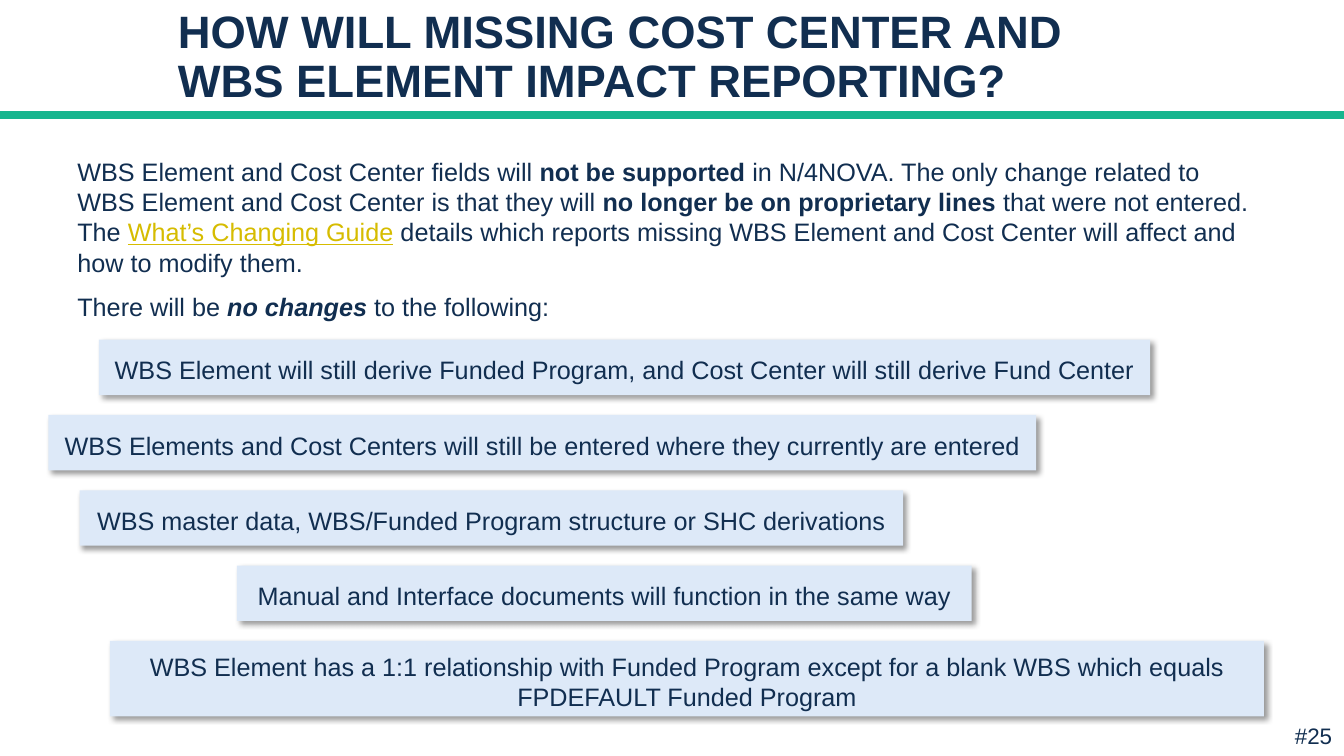
from lxml import etree
from pptx import Presentation
from pptx.dml.color import RGBColor
from pptx.enum.shapes import MSO_CONNECTOR, MSO_SHAPE
from pptx.enum.text import MSO_ANCHOR as Anchor, PP_ALIGN as Align
from pptx.oxml import parse_xml
from pptx.oxml.ns import nsdecls, qn
from pptx.util import Pt

NAVY, GREEN, GOLD, PALE_BLUE = "112E50", "16B58E", "D6BC00", "DDE9F8"
SLIDE_WIDTH, SLIDE_HEIGHT = 960, 540
BOLD = {"bold": True}

TITLE = "HOW WILL MISSING COST CENTER AND WBS ELEMENT IMPACT REPORTING?"
INTRO = [
    [("WBS Element and Cost Center fields will ", {}),
     ("not be supported ", BOLD),
     ("in N/4NOVA. The only change related to WBS Element and Cost Center "
      "is that they will ", {}),
     ("no longer be on proprietary lines ", BOLD),
     ("that were not entered. The ", {}),
     ("What’s Changing Guide", {"underline": True, "color": GOLD}),
     (" details which reports missing WBS Element and Cost Center will affect "
      "and how to modify them.", {})],
    [("There will be ", {}),
     ("no changes", {"bold": True, "italic": True}),
     (" to the following:", {})],
]
# left, width, height, statement
UNCHANGED = [
    (70.6, 751, 39.6, "WBS Element will still derive Funded Program, "
                      "and Cost Center will still derive Fund Center"),
    (34.6, 705.6, 39.6, "WBS Elements and Cost Centers will still be entered "
                        "where they currently are entered"),
    (56.9, 588.2, 39.6, "WBS master data, WBS/Funded Program structure or SHC derivations"),
    (169.2, 524.9, 39.6, "Manual and Interface documents will function in the same way"),
    (78.5, 824.4, 54, "WBS Element has a 1:1 relationship with Funded Program "
                      "except for a blank WBS which equals FPDEFAULT Funded Program"),
]
FIRST_TOP, PITCH = 242.6, 53.8
PAGE_NUMBER = "#25"

SHADOW = (
    f'<a:outerShdw {nsdecls("a")} blurRad="{Pt(4)}" dist="{Pt(3)}" dir="2700000" '
    'algn="tl" rotWithShape="0"><a:srgbClr val="000000"><a:alpha val="40000"/>'
    '</a:srgbClr></a:outerShdw>'
)


def rgb(code):
    return RGBColor.from_string(code)


def write(frame, paragraphs, size, align=Align.LEFT, space=0, line_spacing=None):
    """Fill a text frame with paragraphs made of (text, format) runs."""
    frame.word_wrap = True
    for number, runs in enumerate(paragraphs):
        paragraph = frame.add_paragraph() if number else frame.paragraphs[0]
        paragraph.alignment = align
        if number:
            paragraph.space_before = Pt(space)
        if line_spacing:
            paragraph.line_spacing = line_spacing
        for text, extra in runs:
            run = paragraph.add_run()
            run.text = text
            look = {"name": "Arial", "size": Pt(size), **extra}
            run.font.color.rgb = rgb(look.pop("color", NAVY))
            for attribute, value in look.items():
                setattr(run.font, attribute, value)


def add_text(box, paragraphs, size, anchor=Anchor.TOP, **layout):
    frame = slide.shapes.add_textbox(*map(Pt, box)).text_frame
    frame.vertical_anchor = anchor
    write(frame, paragraphs, size, **layout)


def add_statement(left, top, width, height, text):
    card = slide.shapes.add_shape(
        MSO_SHAPE.RECTANGLE, Pt(left), Pt(top), Pt(width), Pt(height))
    card.fill.solid()
    card.fill.fore_color.rgb = rgb(PALE_BLUE)
    card.line.fill.background()
    card.shadow.inherit = False
    card._element.spPr.find(qn("a:effectLst")).append(parse_xml(SHADOW))
    frame = card.text_frame
    frame.vertical_anchor = Anchor.MIDDLE
    frame.margin_top = Pt(7.2)
    write(frame, [[(text, {})]], 18, align=Align.CENTER)


deck = Presentation()
deck.slide_width, deck.slide_height = Pt(SLIDE_WIDTH), Pt(SLIDE_HEIGHT)
slide = deck.slides.add_slide(deck.slide_layouts[6])

rule = slide.shapes.add_connector(
    MSO_CONNECTOR.STRAIGHT, 0, Pt(82.3), Pt(SLIDE_WIDTH), Pt(82.3))
rule.line.color.rgb = rgb(GREEN)
rule.line.width = Pt(6)
etree.SubElement(rule._element.spPr, qn("a:effectLst"))

add_text((120, 25.2, 720, 54.7), [[(TITLE, BOLD)]], 32.4, Anchor.BOTTOM, line_spacing=0.9)
add_text((48.2, 108, 854, 134), INTRO, 18, space=10)
for row, (left, width, height, statement) in enumerate(UNCHANGED):
    add_statement(left, FIRST_TOP + row * PITCH, width, height, statement)
add_text((916.6, 512, 43.2, 26.6), [[(PAGE_NUMBER, {})]], 16, align=Align.CENTER)

deck.save("out.pptx")
